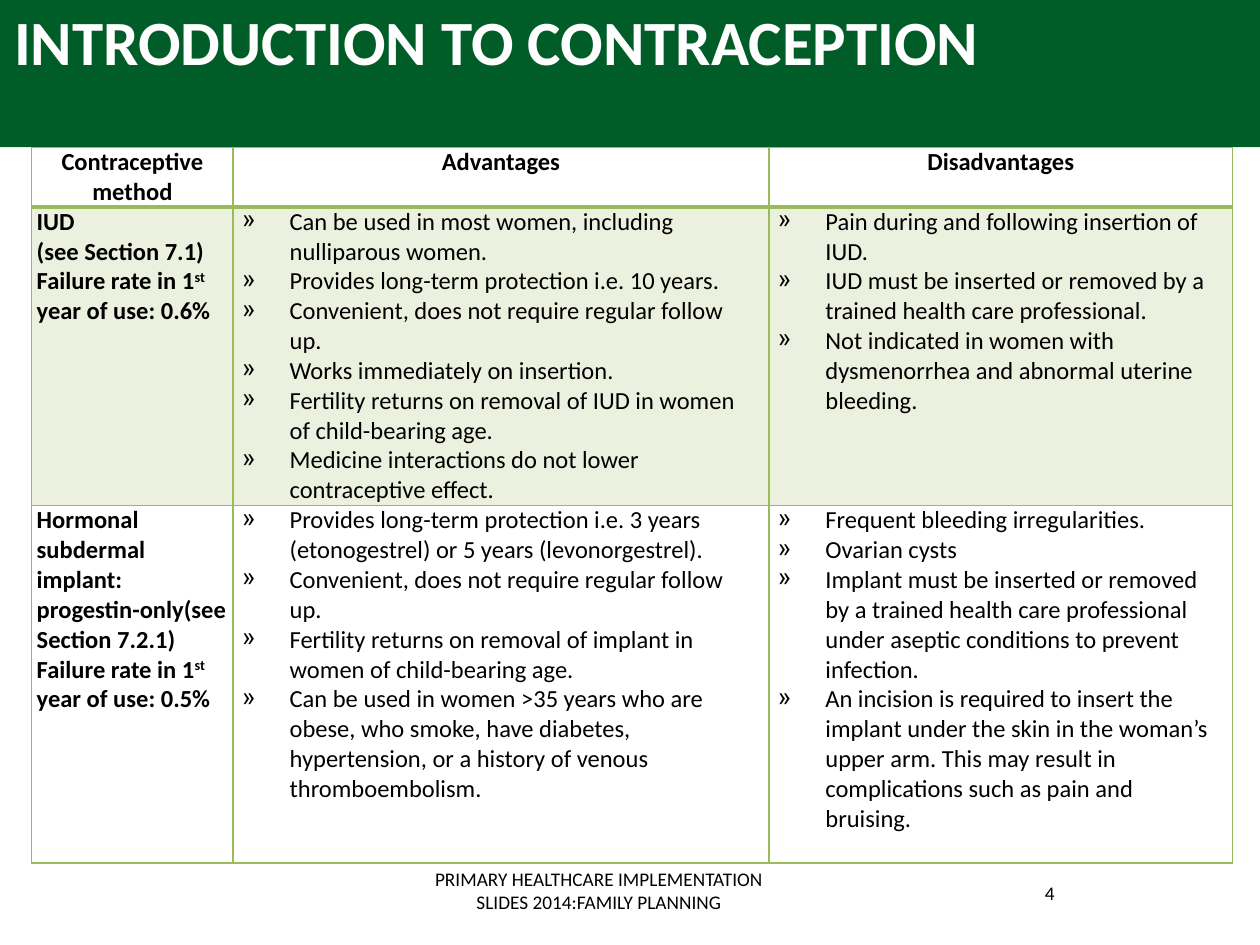
import pptx
import pptx.util
import pptx.dml.color
import pptx.enum.shapes
import pptx.enum.text
import pptx.oxml.ns
from lxml import etree

Cm, Pt = pptx.util.Cm, pptx.util.Pt
ALIGN = pptx.enum.text.PP_ALIGN
ANCHOR = pptx.enum.text.MSO_ANCHOR
qn = pptx.oxml.ns.qn

GREEN, LIME, PALE = "005D28", "9BBB59", "EBF1DE"
BLACK, WHITE = "000000", "FFFFFF"

HEADERS = ["Contraceptive method", "Advantages", "Disadvantages"]
FAILURE = "Failure rate in 1{st} year of use: "
METHODS = [
    (["IUD", "(see Section 7.1)", FAILURE + "0.6%"],
     ["Can be used in most women, including nulliparous women.",
      "Provides long-term protection i.e. 10 years.",
      "Convenient, does not require regular follow up.",
      "Works immediately on insertion.",
      "Fertility returns on removal of IUD in women of child-bearing age.",
      "Medicine interactions do not lower contraceptive effect."],
     ["Pain during and following insertion of IUD.",
      "IUD must be inserted or removed by a trained health care professional.",
      "Not indicated in women with dysmenorrhea and abnormal uterine bleeding."]),
    (["Hormonal subdermal implant: progestin-only(see Section 7.2.1)",
      FAILURE + "0.5%"],
     ["Provides long-term protection i.e. 3 years (etonogestrel) or 5 years "
      "(levonorgestrel).",
      "Convenient, does not require regular follow up.",
      "Fertility returns on removal of implant in women of child-bearing age.",
      "Can be used in women >35 years who are obese, who smoke, have diabetes, "
      "hypertension, or a history of venous thromboembolism."],
     ["Frequent bleeding irregularities.",
      "Ovarian cysts",
      "Implant must be inserted or removed by a trained health care professional "
      "under aseptic conditions to prevent infection.",
      "An incision is required to insert the implant under the skin in the "
      "woman’s upper arm. This may result in complications such as pain and "
      "bruising."]),
]


def color(value):
    return pptx.dml.color.RGBColor.from_string(value)


def style_run(r, size, value=BLACK, bold=False):
    r.font.name = "Calibri"
    r.font.size = Pt(size)
    r.font.bold = bold
    r.font.color.rgb = color(value)


def add_banner(s, left, top, width, height):
    # Green band, placed behind the title
    band = s.shapes.add_shape(pptx.enum.shapes.MSO_SHAPE.RECTANGLE,
                              left, top, width, height)
    band.shadow.inherit = False
    band.fill.solid()
    band.fill.fore_color.rgb = color(GREEN)
    band.line.fill.background()
    title = s.shapes.title
    title._element.addprevious(band._element)

    # Title text
    title.left, title.top = left + Cm(0.03), top - Cm(0.08)
    title.width, title.height = Cm(22.86), height + Cm(0.2)
    tf = title.text_frame
    tf.text = "INTRODUCTION TO CONTRACEPTION"
    tf.vertical_anchor = ANCHOR.TOP
    p = tf.paragraphs[0]
    p.alignment = ALIGN.LEFT
    style_run(p.runs[0], 36, WHITE, True)


def add_bullet(p):
    pPr = p._p.get_or_add_pPr()
    pPr.set("marL", str(Cm(0.96)))
    pPr.set("indent", str(-Cm(0.96)))
    etree.SubElement(pPr, qn("a:buChar")).set("char", "»")


def set_borders(cell, bottom):
    tcPr = cell._tc.get_or_add_tcPr()
    sides = [("a:lnL", 1), ("a:lnR", 1), ("a:lnT", 1), ("a:lnB", bottom)]
    for i, (tag, width) in enumerate(sides):
        ln = etree.Element(qn(tag), w=str(Pt(width)))
        fill = etree.SubElement(ln, qn("a:solidFill"))
        etree.SubElement(fill, qn("a:srgbClr")).set("val", LIME)
        tcPr.insert(i, ln)


def fill_cell(cell, lines, bold=False, bullets=False, align=ALIGN.LEFT,
              fill=None, bottom=1):
    cell.margin_left = cell.margin_right = Cm(0.18 if bullets else 0.1)
    cell.margin_top = cell.margin_bottom = 0
    if fill:
        cell.fill.solid()
        cell.fill.fore_color.rgb = color(fill)
    else:
        cell.fill.background()
    set_borders(cell, bottom)
    tf = cell.text_frame
    for i, line in enumerate(lines):
        p = tf.paragraphs[0] if i == 0 else tf.add_paragraph()
        p.alignment = align
        if bullets:
            add_bullet(p)
        # The ordinal suffix is raised
        before, mark, after = line.partition("{st}")
        for text in filter(None, (before, mark, after)):
            r = p.add_run()
            r.text = text.strip("{}")
            style_run(r, 14, bold=bold)
            if text == mark:
                r.font._element.set("baseline", "30000")


def add_methods_table(s, left, top, widths, heights):
    frame = s.shapes.add_table(len(heights), len(widths), left, top,
                               sum(widths), sum(heights))
    table = frame.table
    table.first_row = table.horz_banding = False
    for col, width in zip(table.columns, widths):
        col.width = width
    for row, height in zip(table.rows, heights):
        row.height = height

    # Header row
    for j, header in enumerate(HEADERS):
        fill_cell(table.cell(0, j), [header], bold=True,
                  align=ALIGN.CENTER, bottom=2)
    # One row per method, first one shaded
    for i, method in enumerate(METHODS, 1):
        for j, lines in enumerate(method):
            fill_cell(table.cell(i, j), lines, bold=j == 0, bullets=j > 0,
                      fill=PALE if i % 2 else None)


def add_footer_text(s, text, left, top, width, height):
    tf = s.shapes.add_textbox(left, top, width, height).text_frame
    tf.word_wrap = True
    tf.text = text
    p = tf.paragraphs[0]
    p.alignment = ALIGN.CENTER
    style_run(p.runs[0], 11)


def main():
    prs = pptx.Presentation()
    prs.slide_width, prs.slide_height = Cm(25.4), Cm(19.05)
    s = prs.slides.add_slide(prs.slide_layouts[5])

    add_banner(s, 0, 0, prs.slide_width, Cm(2.97))
    add_methods_table(s, Cm(0.64), Cm(2.97),
                      [Cm(4.06), Cm(10.8), Cm(9.35)],
                      [Cm(1.19), Cm(6.02), Cm(7.2)])
    # Footer and slide number
    add_footer_text(s, "PRIMARY HEALTHCARE IMPLEMENTATION SLIDES 2014:FAMILY PLANNING",
                    Cm(8.05), Cm(17.35), Cm(8.05), Cm(1.02))
    add_footer_text(s, "4", Cm(18.2), Cm(17.65), Cm(5.92), Cm(1.02))

    prs.save("out.pptx")


if __name__ == "__main__":
    main()
